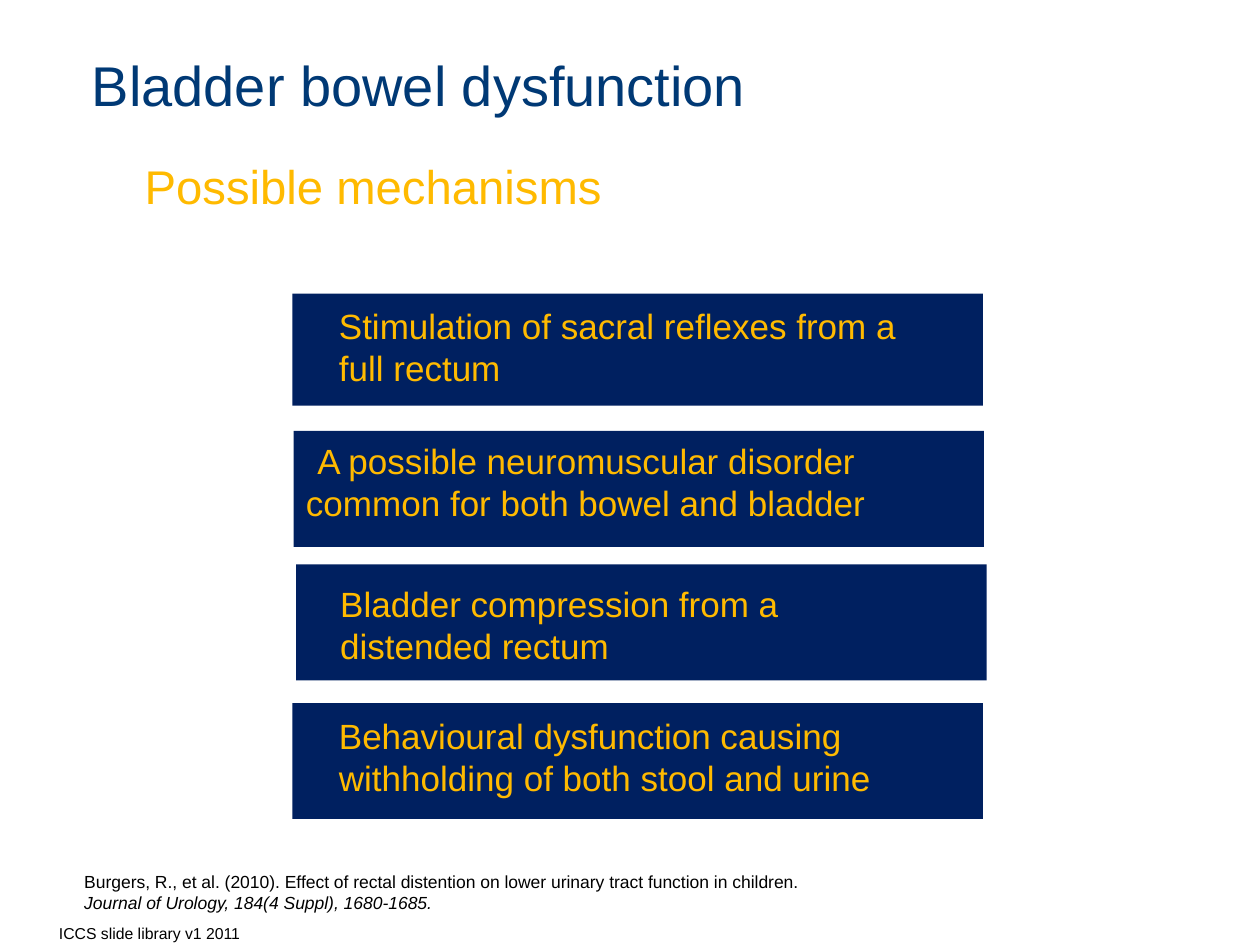
from lxml.etree import SubElement
from pptx import Presentation
from pptx.dml.color import RGBColor
from pptx.enum.shapes import MSO_SHAPE as Preset
from pptx.enum.text import MSO_ANCHOR as Anchor, MSO_AUTO_SIZE as AutoSize, PP_ALIGN as Align
from pptx.oxml.ns import qn
from pptx.util import Inches, Pt

NAVY = RGBColor(0x00, 0x20, 0x60)
BLUE = RGBColor(0x00, 0x39, 0x75)
AMBER = RGBColor(0xFF, 0xBA, 0x00)
BLACK = RGBColor(0x00, 0x00, 0x00)
FONT = "Arial"

# The slide is a grid of 100 columns by 75 rows of square cells.
COLUMNS, ROWS = 100, 75
CELL = Inches(0.1)

PANEL_WIDTH = 54.8
# Panel left, top and height; text left, top and width; text lines.
MECHANISMS = [
    ((23.2, 23.3, 8.9), (26.9, 24.2, 45.3),
     ["Stimulation of sacral reflexes from a", "full rectum"]),
    ((23.5, 44.8, 9.2), (27, 46.2, 35.8),
     ["Bladder compression from a", "distended rectum"]),
    ((23.2, 55.8, 9.2), (26.9, 56.7, 42.6),
     ["Behavioural dysfunction causing", "withholding of both stool and urine"]),
]


def cells(*counts):
    return [round(count * CELL) for count in counts]


def add_span(para, text, size, color, italic=None):
    span = para.add_run()
    span.text = text
    span.font.size = Pt(size)
    span.font.name = FONT
    span.font.italic = italic
    span.font.color.rgb = color
    return span


def add_lines(frame, lines, size, color, italics=()):
    """Write one paragraph per line; italics holds the indexes of slanted lines."""
    for index, line in enumerate(lines):
        para = frame.add_paragraph() if index else frame.paragraphs[0]
        para.alignment = Align.LEFT
        add_span(para, line, size, color, True if index in italics else None)


def add_text(page, place, lines, size, color, anchor=Anchor.TOP, wrap=True,
             inset=True, italics=()):
    box = page.shapes.add_textbox(*cells(*place))
    frame = box.text_frame
    frame.word_wrap = wrap
    frame.auto_size = AutoSize.NONE if wrap else AutoSize.SHAPE_TO_FIT_TEXT
    frame.vertical_anchor = anchor
    if not inset:
        frame.margin_left = frame.margin_right = 0
        frame.margin_top = frame.margin_bottom = 0
    add_lines(frame, lines, size, color, italics)
    return box


def add_panel(page, left, top, height):
    panel = page.shapes.add_shape(Preset.RECTANGLE, *cells(left, top, PANEL_WIDTH, height))
    panel.shadow.inherit = False
    panel.fill.solid()
    panel.fill.fore_color.rgb = NAVY
    panel.line.fill.background()
    return panel


def add_text_shadow(box):
    properties = box.text_frame.paragraphs[0].runs[0].font._element
    effects = SubElement(properties, qn("a:effectLst"))
    shadow = SubElement(effects, qn("a:outerShdw"), dist="38100", dir="2700000")
    SubElement(shadow, qn("a:srgbClr"), val="C0C0C0")
    properties.find(qn("a:solidFill")).addnext(effects)


def add_mechanisms(page):
    for panel_place, (left, top, width), lines in MECHANISMS:
        add_panel(page, *panel_place)
        add_text(page, (left, top, width, 6.7), lines, 20, AMBER, wrap=False, inset=False)


def add_neuromuscular_panel(page):
    frame = add_panel(page, 23.3, 34.2, 9.2).text_frame
    frame.word_wrap = True
    frame.vertical_anchor = Anchor.TOP
    frame.margin_top = Inches(0.07)
    add_lines(frame, ["A possible neuromuscular disorder common for both bowel and bladder"],
              20, AMBER)
    frame.paragraphs[0]._p.get_or_add_pPr().set("indent", str(Inches(0.09)))


def main():
    deck = Presentation()
    deck.slide_width, deck.slide_height = cells(COLUMNS, ROWS)
    page = deck.slides.add_slide(deck.slide_layouts[6])

    add_text(page, (6.3, 0, 93.3, 13.3), ["Bladder bowel dysfunction"], 32, BLUE, Anchor.MIDDLE)
    subtitle = add_text(page, (10.5, 10.3, 77, 7.2), ["Possible mechanisms"], 27, AMBER,
                        Anchor.BOTTOM)
    add_text_shadow(subtitle)

    add_mechanisms(page)
    add_neuromuscular_panel(page)

    add_text(page, (3.7, 72.8, 31.7, 1.7), ["ICCS slide library v1 2011"], 9, BLACK)
    add_text(page, (5.7, 68.6, 59.5, 6.1),
             ["Burgers, R., et al. (2010). Effect of rectal distention on lower urinary tract "
              "function in children.",
              "Journal of Urology, 184(4 Suppl), 1680-1685."],
             10, BLACK, wrap=False, italics=(1,))
    deck.save("out.pptx")


if __name__ == "__main__":
    main()
